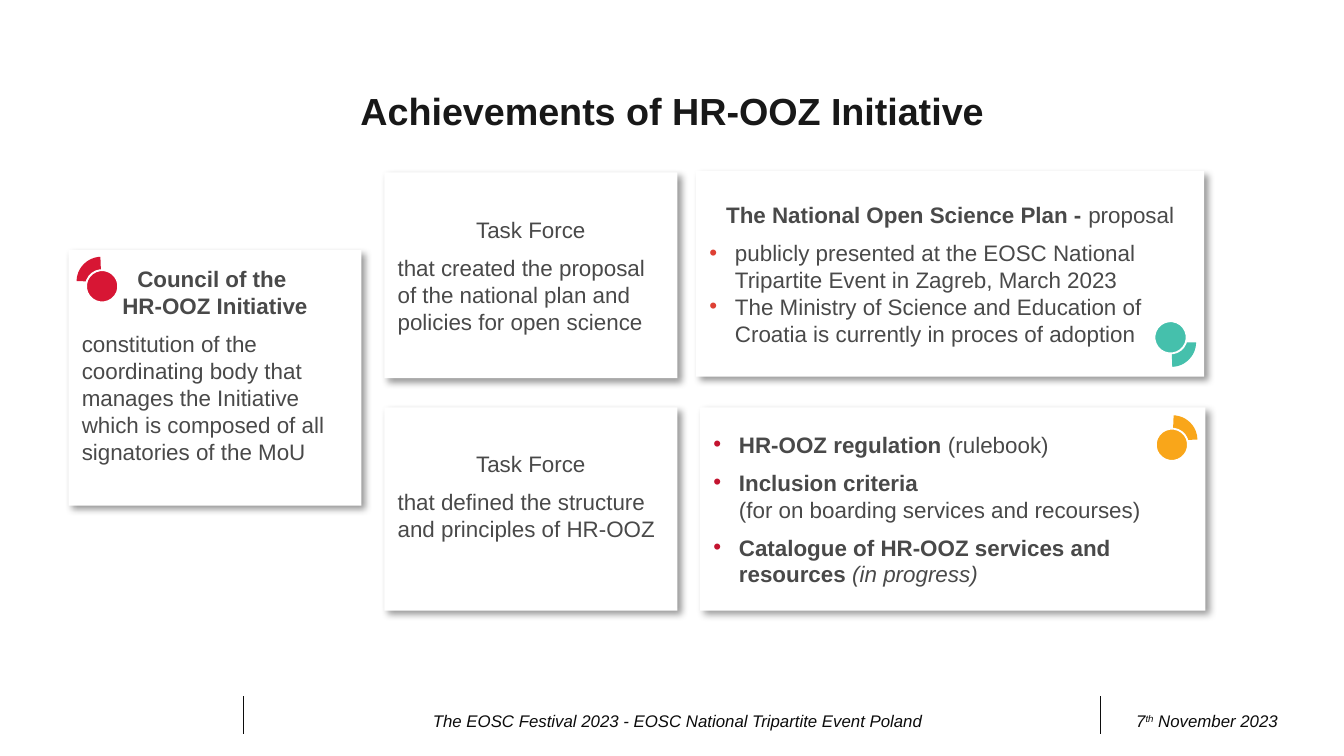
"""Build the slide on the achievements of the HR-OOZ Initiative."""
import pptx
import pptx.dml.color
import pptx.enum.shapes
import pptx.enum.text
import pptx.oxml
import pptx.oxml.ns
import pptx.util

Inches, Pt = pptx.util.Inches, pptx.util.Pt
SHAPE = pptx.enum.shapes.MSO_SHAPE
ALIGN = pptx.enum.text.PP_ALIGN
WIDTH = 10
HEIGHT = WIDTH * 9 / 16
GREY, BLACK, WHITE = "494949", "0C0C0C", "FFFFFF"
LEFT, MIDDLE, RIGHT = 5.1, 28.6, 51.8
COLUMN, ROW = 21.8, 27.22


def rgb(value):
    return pptx.dml.color.RGBColor.from_string(value)


def across(share):
    return Inches(WIDTH * share / 100)


def down(share):
    return Inches(HEIGHT * share / 100)


def area(x, y, w, h):
    return across(x), down(y), across(w), down(h)


def add_xml(parent, xml):
    parent.append(pptx.oxml.parse_xml(xml.replace(">", f" {pptx.oxml.ns.nsdecls('a')}>", 1)))


def add_bullet(p, color):
    pPr = p._p.get_or_add_pPr()
    pPr.set("marL", str(Inches(0.19)))
    pPr.set("indent", str(Inches(-0.19)))
    add_xml(pPr, f'<a:buClr><a:srgbClr val="{color}"/></a:buClr>')
    add_xml(pPr, '<a:buFont typeface="Arial"></a:buFont>')
    add_xml(pPr, '<a:buChar char="•"></a:buChar>')


def add_run(p, text, style, size, color):
    r = p.add_run()
    r.text = text
    r.font.name, r.font.size = "Arial", Pt(size)
    r.font.color.rgb = rgb(color)
    r.font.bold, r.font.italic = "b" in style, "i" in style
    if "^" in style:
        r._r.get_or_add_rPr().set("baseline", "30000")


def write(sp, paragraphs, size=12, color=GREY):
    """Fill a shape with (runs, centred, space after, bullet colour) paragraphs."""
    tf = sp.text_frame
    tf.word_wrap = True
    tf.vertical_anchor = pptx.enum.text.MSO_ANCHOR.MIDDLE
    for i, (runs, centred, after, bullet) in enumerate(paragraphs):
        p = tf.add_paragraph() if i else tf.paragraphs[0]
        if bullet:
            add_bullet(p, bullet)
        p.alignment = ALIGN.CENTER if centred else ALIGN.LEFT
        p.space_after = Pt(after)
        for text, style in runs:
            if text == "\n":
                p.add_line_break()
            else:
                add_run(p, text, style, size, color)
    return tf


def add_label(s, box, runs, size, color):
    sp = s.shapes.add_textbox(*area(*box))
    return write(sp, [(runs, True, 0, None)], size, color)


def add_card(s, box, paragraphs, bottom=0.05):
    sp = s.shapes.add_shape(SHAPE.RECTANGLE, *area(*box))
    sp.fill.solid()
    sp.fill.fore_color.rgb = rgb(WHITE)
    sp.line.fill.background()
    add_xml(sp._element.spPr,
            '<a:effectLst><a:outerShdw blurRad="50800" dist="38100" dir="2700000" '
            'algn="tl" rotWithShape="0"><a:srgbClr val="000000"><a:alpha val="40000"/>'
            '</a:srgbClr></a:outerShdw></a:effectLst>')
    write(sp, paragraphs).margin_bottom = Inches(bottom)


def add_badge(s, x, y, color, side=1, end=1):
    """Draw an arc and a dot about a centre, mirrored where side or end is -1."""
    parts = ((SHAPE.BLOCK_ARC, 0.37, x, y),
             (SHAPE.OVAL, 0.24, x + 0.05 * side, y + 0.62 * end))
    for kind, size, cx, cy in parts:
        d = Inches(size)
        sp = s.shapes.add_shape(kind, across(cx) - d // 2, down(cy) - d // 2, d, d)
        sp.shadow.inherit = False
        sp.fill.solid()
        sp.fill.fore_color.rgb = rgb(color)
        sp.rotation = 292 * side * end % 360
        for name, sign in (("flipH", side), ("flipV", end)):
            if sign < 0:
                sp._element.spPr.xfrm.set(name, "1")
        if kind == SHAPE.BLOCK_ARC:
            sp.line.fill.background()
            for i, value in enumerate((149.48, 201.38, 0.27)):
                sp.adjustments[i] = value
        else:
            sp.line.color.rgb = rgb(WHITE)
            sp.line.width = Pt(1)


def add_divider(s, x):
    line = s.shapes.add_connector(pptx.enum.shapes.MSO_CONNECTOR.STRAIGHT,
                                  across(x), down(92.1), across(x), down(97.1))
    line.line.color.rgb = rgb(BLACK)
    line.line.width = Pt(0.5)
    add_xml(line._element.spPr, "<a:effectLst></a:effectLst>")


def task_force(text):
    return [([("Task Force", "")], True, 6, None), ([(text, "")], False, 0, None)]


def bullets(items, color, after):
    return [(runs, False, after, color) for runs in items]


def add_cards(s):
    add_card(s, (LEFT, 33.1, COLUMN, 33.8), [
        ([("Council of the ", "b")], True, 0, None),
        ([("HR-OOZ Initiative", "b")], True, 6, None),
        ([("constitution of the coordinating body that manages the Initiative "
           "which is composed of all signatories of the MoU", "")], False, 0, None),
    ], bottom=0.24)
    add_card(s, (MIDDLE, 22.8, COLUMN, ROW), task_force(
        "that created the proposal of the national plan and policies for open science"))
    add_card(s, (MIDDLE, 53.9, COLUMN, 26.87), task_force(
        "that defined the structure and principles of HR-OOZ"), bottom=0.24)
    plan = [([("The National Open Science Plan - ", "b"), ("proposal", "")], True, 6, None)]
    add_card(s, (RIGHT, 22.6, 37.8, ROW), plan + bullets([
        [("publicly presented at the EOSC National Tripartite Event in Zagreb, "
          "March 2023", "")],
        [("The Ministry of Science and Education of Croatia is currently in proces "
          "of adoption", "")],
    ], "DE4034", 0))
    add_card(s, (RIGHT + 0.3, 53.9, 37.6, 26.87), bullets([
        [("HR-OOZ regulation ", "b"), ("(rulebook)", "")],
        [("Inclusion criteria ", "b"), ("\n", ""),
         ("(for on boarding services and recourses)", "")],
        [("Catalogue of HR-OOZ services and resources ", "b"), ("(in progress)", "i")],
    ], "C3132F", 6))


def main():
    prs = pptx.Presentation()
    prs.slide_width, prs.slide_height = Inches(WIDTH), Inches(HEIGHT)
    s = prs.slides.add_slide(prs.slide_layouts[6])
    for x in (18.1, 81.9):
        add_divider(s, x)
    title = add_label(s, (6.9, 5.34, 86.2, 19.4),
                      [("Achievements of HR-OOZ Initiative", "b")], 20.2, "181818")
    title.paragraphs[0].line_spacing = 0.9
    add_cards(s)
    add_badge(s, 7.55, 37.25, "D71634")
    add_badge(s, 87.25, 58.22, "F9A61A", side=-1)
    add_badge(s, 87.15, 45.25, "45C0AC", side=-1, end=-1)
    add_label(s, (22.4, 92.65, 56, 5.34),
              [("The EOSC Festival 2023 - EOSC National Tripartite Event Poland", "i")], 9, BLACK)
    add_label(s, (82.7, 92.65, 14.2, 5.34),
              [("7", "i"), ("th", "i^"), (" November 2023", "i")], 9, BLACK)
    prs.save("out.pptx")


if __name__ == "__main__":
    main()
